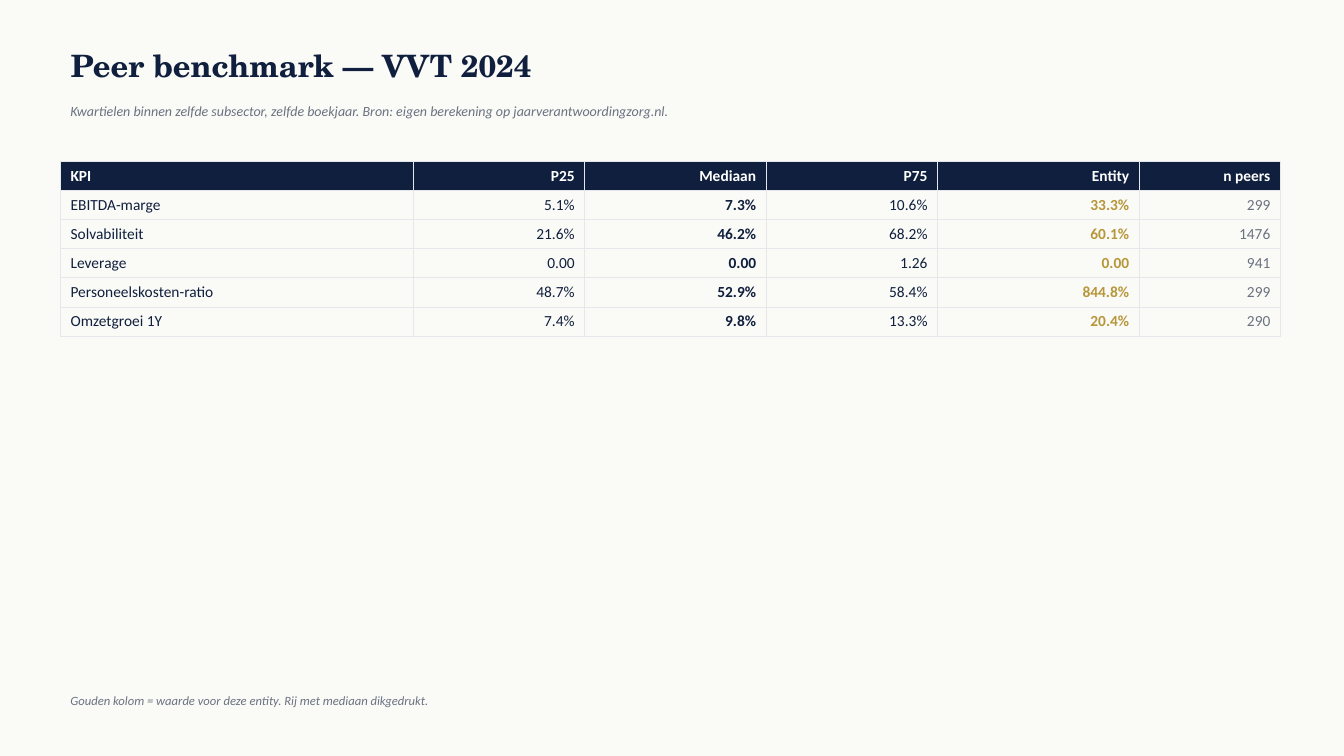
from lxml import etree
from pptx import Presentation
from pptx.dml.color import RGBColor
from pptx.enum.text import MSO_ANCHOR, MSO_AUTO_SIZE, PP_ALIGN
from pptx.oxml.ns import qn
from pptx.util import Inches, Pt

LEFT, RIGHT = PP_ALIGN.LEFT, PP_ALIGN.RIGHT
MIDDLE = MSO_ANCHOR.MIDDLE
NO_AUTOFIT = MSO_AUTO_SIZE.NONE
TITLE_ONLY = 5

COLORS = {
    "background": "FAFAF7",
    "navy": "0F1F3D",
    "gray": "6B7280",
    "gold": "B8973B",
    "white": "FFFFFF",
    "border": "E5E7EB",
}
HEADING_FONT = "TeX Gyre Schola"
BODY_FONT = "Calibri"
LEFT_EDGE = 0.6
TEXT_WIDTH = 12
ROW_HEIGHT = 0.28
BORDER_WIDTH = Pt(0.5)

COLUMNS = [
    {"name": "KPI", "width": 3.5, "color": "navy", "bold": False},
    {"name": "P25", "width": 1.7, "color": "navy", "bold": False},
    {"name": "Mediaan", "width": 1.8, "color": "navy", "bold": True},
    {"name": "P75", "width": 1.7, "color": "navy", "bold": False},
    {"name": "Entity", "width": 2, "color": "gold", "bold": True},
    {"name": "n peers", "width": 1.4, "color": "gray", "bold": False},
]
KPI_ROWS = [
    ["EBITDA-marge", "5.1%", "7.3%", "10.6%", "33.3%", "299"],
    ["Solvabiliteit", "21.6%", "46.2%", "68.2%", "60.1%", "1476"],
    ["Leverage", "0.00", "0.00", "1.26", "0.00", "941"],
    ["Personeelskosten-ratio", "48.7%", "52.9%", "58.4%", "844.8%", "299"],
    ["Omzetgroei 1Y", "7.4%", "9.8%", "13.3%", "20.4%", "290"],
]


def rgb(name):
    """Return the named colour."""
    return RGBColor.from_string(COLORS[name])


def write_text(text_frame, text, color, alignment=LEFT, **font_values):
    """Write one formatted paragraph."""
    paragraph = text_frame.paragraphs[0]
    paragraph.alignment = alignment
    run = paragraph.add_run()
    run.text = text
    run.font.color.rgb = rgb(color)
    for attribute, value in font_values.items():
        setattr(run.font, attribute, value)


def format_line(shape, top, height, text, color, **font_values):
    """Place a full-width line of text in a shape."""
    box = {"left": LEFT_EDGE, "top": top, "width": TEXT_WIDTH, "height": height}
    for attribute, value in box.items():
        setattr(shape, attribute, Inches(value))
    frame = shape.text_frame
    frame_values = {"word_wrap": True, "auto_size": NO_AUTOFIT, "vertical_anchor": MIDDLE}
    for attribute, value in frame_values.items():
        setattr(frame, attribute, value)
    write_text(frame, text, color, **font_values)


def add_note(slide, top, text, size):
    """Add a gray italic line of text."""
    shape = slide.shapes.add_textbox(0, 0, 0, 0)
    format_line(shape, top, 0.3, text, "gray", name=BODY_FONT, size=Pt(size), italic=True)


def add_borders(cell):
    """Draw a thin border on all four sides of a cell."""
    properties = cell._tc.get_or_add_tcPr()
    for side in ("a:lnL", "a:lnR", "a:lnT", "a:lnB"):
        line = etree.SubElement(properties, qn(side), w=str(BORDER_WIDTH))
        fill = etree.SubElement(line, qn("a:solidFill"))
        etree.SubElement(fill, qn("a:srgbClr"), val=COLORS["border"])


def fill_cell(cell, text, column, is_header, alignment):
    """Write and format one table cell."""
    add_borders(cell)
    if is_header:
        cell.fill.solid()
        cell.fill.fore_color.rgb = rgb("navy")
    else:
        cell.fill.background()
    color = "white" if is_header else column["color"]
    bold = is_header or column["bold"]
    write_text(cell.text_frame, text, color, alignment, name=BODY_FONT, size=Pt(11), bold=bold)


def add_benchmark_table(slide):
    """Add the table of quartiles per KPI."""
    rows = [[column["name"] for column in COLUMNS]] + KPI_ROWS
    width = sum(column["width"] for column in COLUMNS)
    table = slide.shapes.add_table(
        len(rows), len(COLUMNS), Inches(LEFT_EDGE), Inches(1.6),
        Inches(width), Inches(ROW_HEIGHT * len(rows)),
    ).table
    table.horz_banding = False
    for column_index, column in enumerate(COLUMNS):
        table.columns[column_index].width = Inches(column["width"])
        alignment = RIGHT if column_index else LEFT
        for row_index, row in enumerate(rows):
            cell = table.cell(row_index, column_index)
            fill_cell(cell, row[column_index], column, row_index == 0, alignment)


def main():
    """Build the peer benchmark slide."""
    presentation = Presentation()
    presentation.slide_width = Inches(13.33)
    presentation.slide_height = Inches(7.5)
    slide = presentation.slides.add_slide(presentation.slide_layouts[TITLE_ONLY])
    slide.background.fill.solid()
    slide.background.fill.fore_color.rgb = rgb("background")
    format_line(slide.shapes.title, 0.4, 0.5, "Peer benchmark — VVT 2024", "navy",
                name=HEADING_FONT, size=Pt(22), bold=True)
    add_note(slide, 0.95, "Kwartielen binnen zelfde subsector, zelfde boekjaar. "
             "Bron: eigen berekening op jaarverantwoordingzorg.nl.", 10)
    add_benchmark_table(slide)
    add_note(slide, 6.8, "Gouden kolom = waarde voor deze entity. "
             "Rij met mediaan dikgedrukt.", 9)
    presentation.save("out.pptx")


if __name__ == "__main__":
    main()
